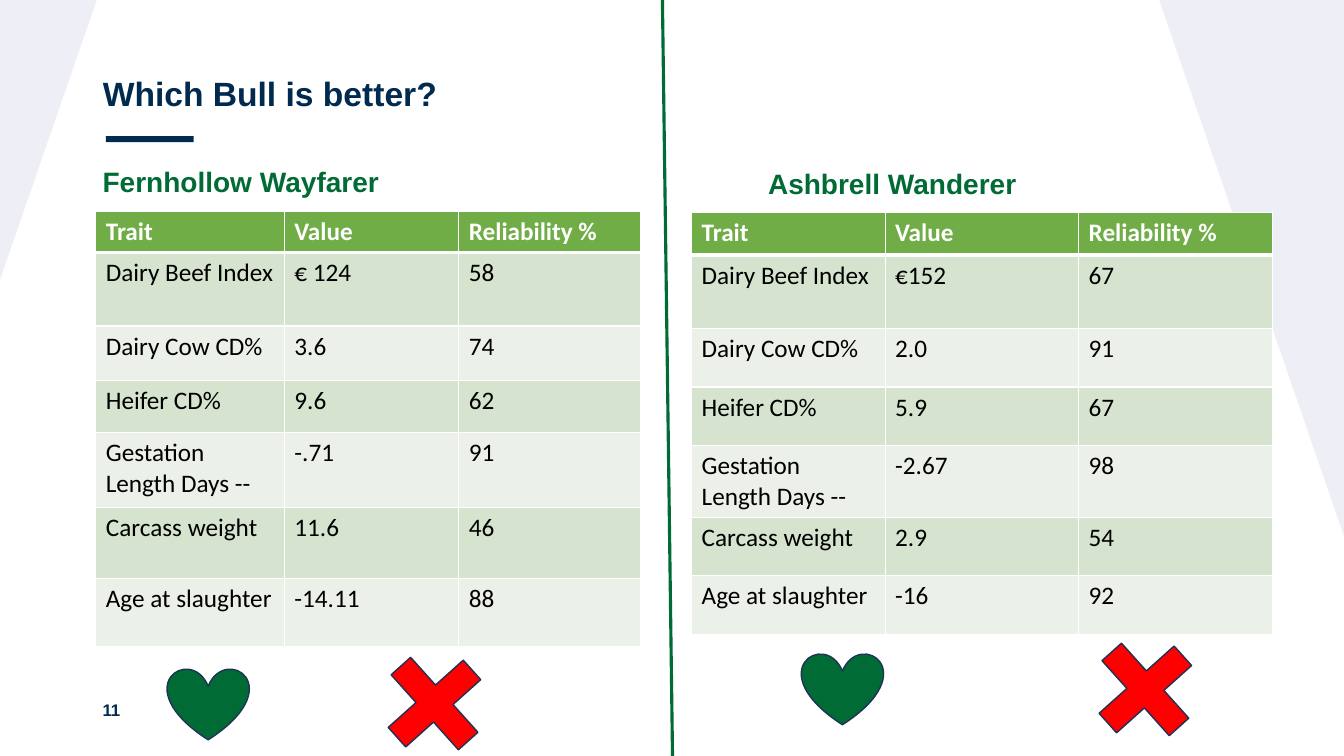
from dataclasses import dataclass
from typing import Any

from lxml.etree import SubElement
from pptx import Presentation
from pptx.dml.color import RGBColor
from pptx.enum.shapes import MSO_CONNECTOR, MSO_SHAPE
from pptx.enum.text import MSO_ANCHOR, MSO_AUTO_SIZE, PP_ALIGN
from pptx.oxml.ns import qn
from pptx.util import Inches, Pt

WIDE, HIGH = Inches(13.33), Inches(7.5)
NAVY, GREEN, PALE, EDGE, WHITE = "002A4E", "006B35", "EEEFF6", "1E3256", "FFFFFF"
HEAD, BANDS = "70AD47", ("D5E3CF", "EBF1E9")
TRAITS = ("Trait", "Dairy Beef Index", "Dairy Cow CD%", "Heifer CD%",
          "Gestation Length Days --", "Carcass weight", "Age at slaughter")


@dataclass
class Box:
    left: float
    top: float
    width: float
    height: float

    def place(self) -> tuple[int, int, int, int]:
        return across(self.left), down(self.top), across(self.width), down(self.height)


@dataclass
class Form:
    kind: MSO_SHAPE
    box: Box
    fill: str
    line: str | None = None
    turn: float = 0
    bend: float | None = None


@dataclass
class Label:
    text: str
    box: Box
    size: int
    color: str
    anchor: MSO_ANCHOR = MSO_ANCHOR.TOP
    lead: float = 0.9


@dataclass
class Bull:
    left: float
    top: float
    cols: tuple[float, ...]
    rows: tuple[float, ...]
    values: tuple[str, ...]
    trust: tuple[str, ...]


def across(share: float) -> int:
    return round(WIDE * share / 100)


def down(share: float) -> int:
    return round(HIGH * share / 100)


def tint(code: str) -> RGBColor:
    return RGBColor.from_string(code)


def assign(target: Any, values: dict[str, Any]) -> None:
    for name, value in values.items():
        setattr(target, name, value)


def style(font: Any, name: str, size: int, color: str, bold: bool) -> None:
    assign(font, {"name": name, "size": Pt(size), "bold": bold})
    font.color.rgb = tint(color)


def paint(target: Any, color: str) -> None:
    target.fill.solid()
    target.fill.fore_color.rgb = tint(color)


def write(shape: Any, label: Label) -> None:
    assign(shape, dict(zip(("left", "top", "width", "height"), label.box.place())))
    frame = shape.text_frame
    assign(frame, {"text": label.text, "word_wrap": True, "auto_size": MSO_AUTO_SIZE.NONE,
                   "vertical_anchor": label.anchor})
    para = frame.paragraphs[0]
    assign(para, {"alignment": PP_ALIGN.LEFT, "line_spacing": label.lead})
    style(para.runs[0].font, "Arial", label.size, label.color, True)


def draw(slide: Any, form: Form) -> None:
    shape = slide.shapes.add_shape(form.kind, *form.box.place())
    assign(shape, {"rotation": form.turn})
    shape.shadow.inherit = False
    paint(shape, form.fill)
    if form.bend is not None:
        shape.adjustments[0] = form.bend
    if form.line:
        shape.line.color.rgb = tint(form.line)
        shape.line.width = Pt(1)
    else:
        shape.line.fill.background()


def rule(cell: Any, row: int) -> None:
    thick = {"L": 1, "R": 1, "T": 3 if row == 1 else 1, "B": 3 if row == 0 else 1}
    props = cell._tc.get_or_add_tcPr()
    for side, width in thick.items():
        line = SubElement(props, qn(f"a:ln{side}"), w=str(Pt(width)))
        SubElement(SubElement(line, qn("a:solidFill")), qn("a:srgbClr"), val=WHITE)


def chart(slide: Any, bull: Bull) -> None:
    box = Box(bull.left, bull.top, sum(bull.cols), sum(bull.rows))
    table = slide.shapes.add_table(len(bull.rows), len(bull.cols), *box.place()).table
    table.horz_banding = False
    for col, share in zip(table.columns, bull.cols):
        col.width = across(share)
    data = zip(TRAITS, ("Value", *bull.values), ("Reliability %", *bull.trust))
    for row, (share, texts) in enumerate(zip(bull.rows, data)):
        table.rows[row].height = down(share)
        top = row == 0
        for col, text in enumerate(texts):
            cell = table.cell(row, col)
            cell.text = text
            rule(cell, row)
            paint(cell, HEAD if top else BANDS[(row - 1) % 2])
            font = cell.text_frame.paragraphs[0].runs[0].font
            style(font, "Calibri", 18, WHITE if top else "000000", top)


def split(slide: Any) -> None:
    line = slide.shapes.add_connector(
        MSO_CONNECTOR.STRAIGHT, across(49.29), 0, across(50.04), HIGH)
    line.line.color.rgb = tint(GREEN)
    line.line.width = Pt(2.25)
    SubElement(line._element.spPr, qn("a:effectLst"))


def heart(left: float, top: float) -> Form:
    return Form(MSO_SHAPE.HEART, Box(left, top, 6.08, 9.47), GREEN, EDGE)


def cross(left: float, top: float) -> Form:
    return Form(MSO_SHAPE.CROSS, Box(left, top, 7.5, 13.33), "FF0000", EDGE, 48.1, 0.37)


TITLE = Label("Which Bull is better?", Box(6.9, 1.2, 70.9, 14.53), 24, NAVY, MSO_ANCHOR.BOTTOM)
LABELS = (
    Label("Fernhollow Wayfarer", Box(6.9, 21.6, 39.3, 5.33), 20, GREEN),
    Label("Ashbrell Wanderer", Box(56.41, 21.87, 33.6, 5.33), 20, GREEN),
    Label("11", Box(6.9, 91.2, 7.2, 5.33), 12, NAVY, MSO_ANCHOR.MIDDLE, 1.0),
)
DECOR = (
    Form(MSO_SHAPE.ISOSCELES_TRIANGLE, Box(86.25, 0, 13.75, 70.93), PALE, turn=180, bend=0),
    Form(MSO_SHAPE.RECTANGLE, Box(7.88, 18, 6.53, 0.8), NAVY),
    Form(MSO_SHAPE.ISOSCELES_TRIANGLE, Box(0, 0, 7.2, 37), PALE, turn=180, bend=1),
)
BULLS = (
    Bull(7.13, 28, (14.03, 12.98, 13.5), (5.2, 9.73, 7.2, 6.93, 9.87, 9.4, 9.07),
         ("€ 124", "3.6", "9.6", "-.71", "11.6", "-14.11"),
         ("58", "74", "62", "91", "46", "88")),
    Bull(51.46, 28.13, (14.4,) * 3, (5.6, 9.73, 7.75, 7.75, 9.4, 7.75, 7.75),
         ("€152", "2.0", "5.9", "-2.67", "2.9", "-16"),
         ("67", "91", "67", "98", "54", "92")),
)
MARKS = (heart(12.45, 88.4), cross(28.58, 86.4), heart(59.64, 86.4), cross(81.47, 84.53))


def main() -> None:
    deck = Presentation()
    assign(deck, {"slide_width": WIDE, "slide_height": HIGH})
    slide = deck.slides.add_slide(deck.slide_layouts[5])
    write(slide.shapes.title, TITLE)
    for form in DECOR:
        draw(slide, form)
    for label in LABELS:
        write(slide.shapes.add_textbox(*label.box.place()), label)
    for bull in BULLS:
        chart(slide, bull)
    split(slide)
    for mark in MARKS:
        draw(slide, mark)
    deck.save("out.pptx")


if __name__ == "__main__":
    main()
